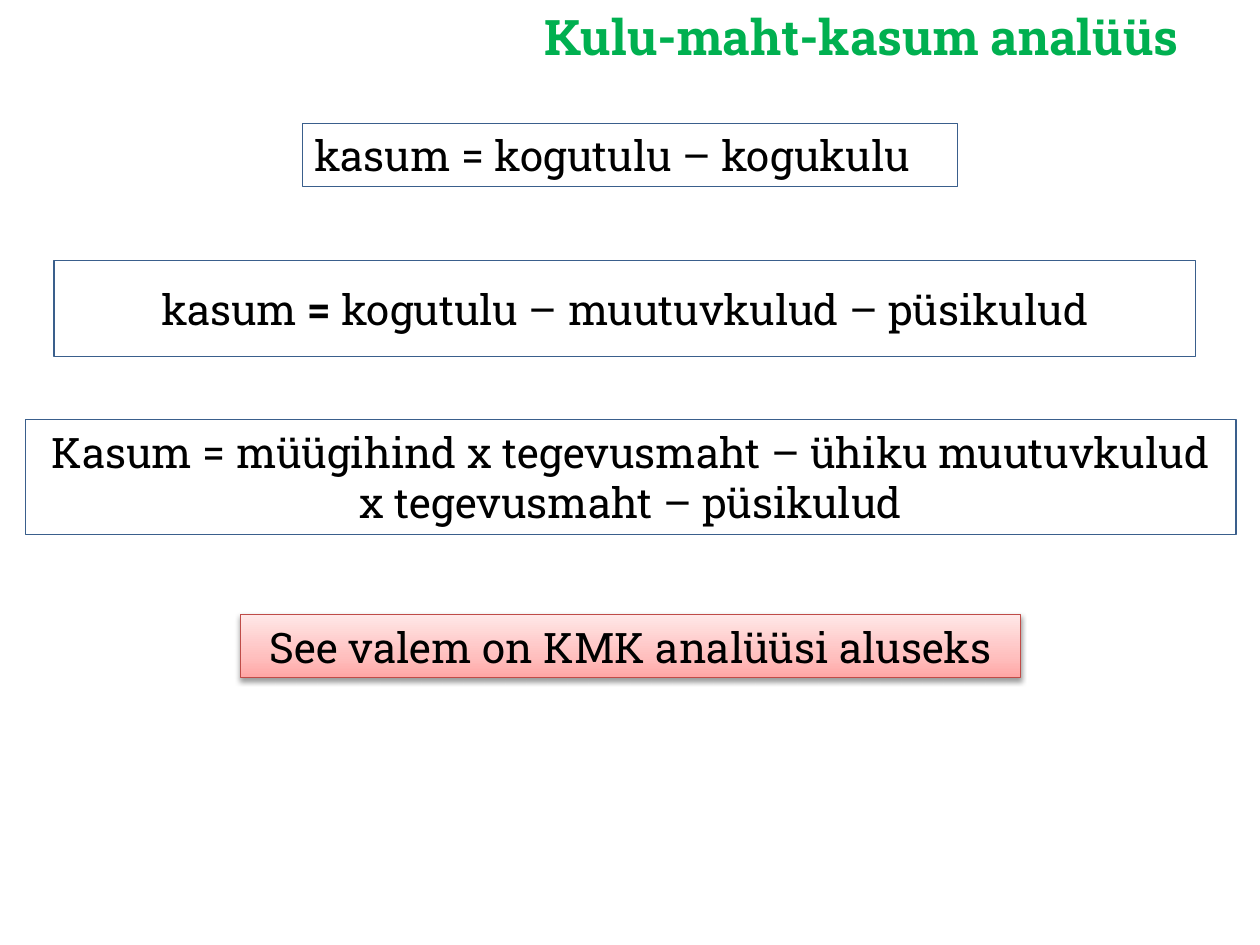
import copy

import pptx
import pptx.dml.color
import pptx.enum.shapes
import pptx.enum.text
import pptx.oxml
import pptx.oxml.ns
import pptx.util

Inches = pptx.util.Inches
Pt = pptx.util.Pt
Align = pptx.enum.text.PP_ALIGN
rgb = pptx.dml.color.RGBColor.from_string

THEME = {
    "font": "Roboto Slab",
    "heading_size": 28,
    "body_size": 24,
    "heading": "00B050",
    "text": "000000",
    "outline": "3A5F8C",
    "note_outline": "BF4C48",
    "note_gradient": [(0, "FFA6A5"), (0.35, "FFC0BF"), (1, "FFE7E7")],
}


def write_text(box, text, *, size=THEME["body_size"], color=THEME["text"],
               bold=False, align=Align.CENTER, bold_part=None):
    """Fill a box with one paragraph; bold_part is the only bold stretch if given."""
    frame = box.text_frame
    frame.word_wrap = True
    frame.auto_size = pptx.enum.text.MSO_AUTO_SIZE.NONE
    frame.vertical_anchor = pptx.enum.text.MSO_ANCHOR.MIDDLE
    para = frame.paragraphs[0]
    para.alignment = align
    pieces = [(text, bold)]
    if bold_part:
        before, after = text.split(bold_part, 1)
        pieces = [(before, False), (bold_part, True), (after, False)]
    for piece, is_bold in pieces:
        span = para.add_run()
        span.text = piece
        span.font.name = THEME["font"]
        span.font.size = Pt(size)
        span.font.bold = is_bold
        span.font.color.rgb = rgb(color)


def add_box(page, left, top, width, height, outline=THEME["outline"]):
    """Add an unfilled rectangle with a thin outline."""
    box = page.shapes.add_shape(
        pptx.enum.shapes.MSO_SHAPE.RECTANGLE,
        Inches(left), Inches(top), Inches(width), Inches(height))
    box.fill.background()
    box.line.color.rgb = rgb(outline)
    box.line.width = Pt(0.75)
    box.shadow.inherit = False
    return box


deck = pptx.Presentation()
deck.slide_width = Inches(10)
deck.slide_height = Inches(7.5)
page = deck.slides.add_slide(deck.slide_layouts[5])

# Heading
heading = page.shapes.title
heading.left, heading.top = Inches(3.67), Inches(0)
heading.width, heading.height = Inches(6.33), Inches(0.57)
write_text(heading, "Kulu-maht-kasum analüüs", size=THEME["heading_size"],
           color=THEME["heading"], bold=True)

# Formulas, from the simplest to the most detailed
formulas = [
    ((2.4, 0.98, 5.2, 0.5), "kasum = kogutulu – kogukulu",
     {"align": Align.LEFT}),
    ((0.43, 2.07, 9.06, 0.76), "kasum = kogutulu – muutuvkulud – püsikulud",
     {"bold_part": " = "}),
    ((0.2, 3.33, 9.61, 0.91),
     "Kasum = müügihind x tegevusmaht – ühiku muutuvkulud "
     "x tegevusmaht – püsikulud", {}),
]
for place, formula, style in formulas:
    write_text(add_box(page, *place), formula, **style)

# Concluding note with a three-stop gradient
note = add_box(page, 1.91, 4.88, 6.19, 0.5, outline=THEME["note_outline"])
write_text(note, "See valem on KMK analüüsi aluseks")
note.fill.gradient()
note.fill.gradient_angle = 90
properties = note._element.spPr
stop_list = properties.find(".//" + pptx.oxml.ns.qn("a:gsLst"))
stop_list.insert(1, copy.deepcopy(stop_list[0]))
for stop, (position, color) in zip(note.fill.gradient_stops, THEME["note_gradient"]):
    stop.position = position
    stop.color.rgb = rgb(color)

# Soft shadow below the note
properties.find(pptx.oxml.ns.qn("a:effectLst")).append(pptx.oxml.parse_xml(
    f'<a:outerShdw {pptx.oxml.ns.nsdecls("a")} blurRad="{Pt(3.1)}" '
    f'dist="{Pt(1.6)}" dir="5400000" rotWithShape="0">'
    '<a:srgbClr val="000000"><a:alpha val="38000"/></a:srgbClr></a:outerShdw>'))

deck.save("out.pptx")
